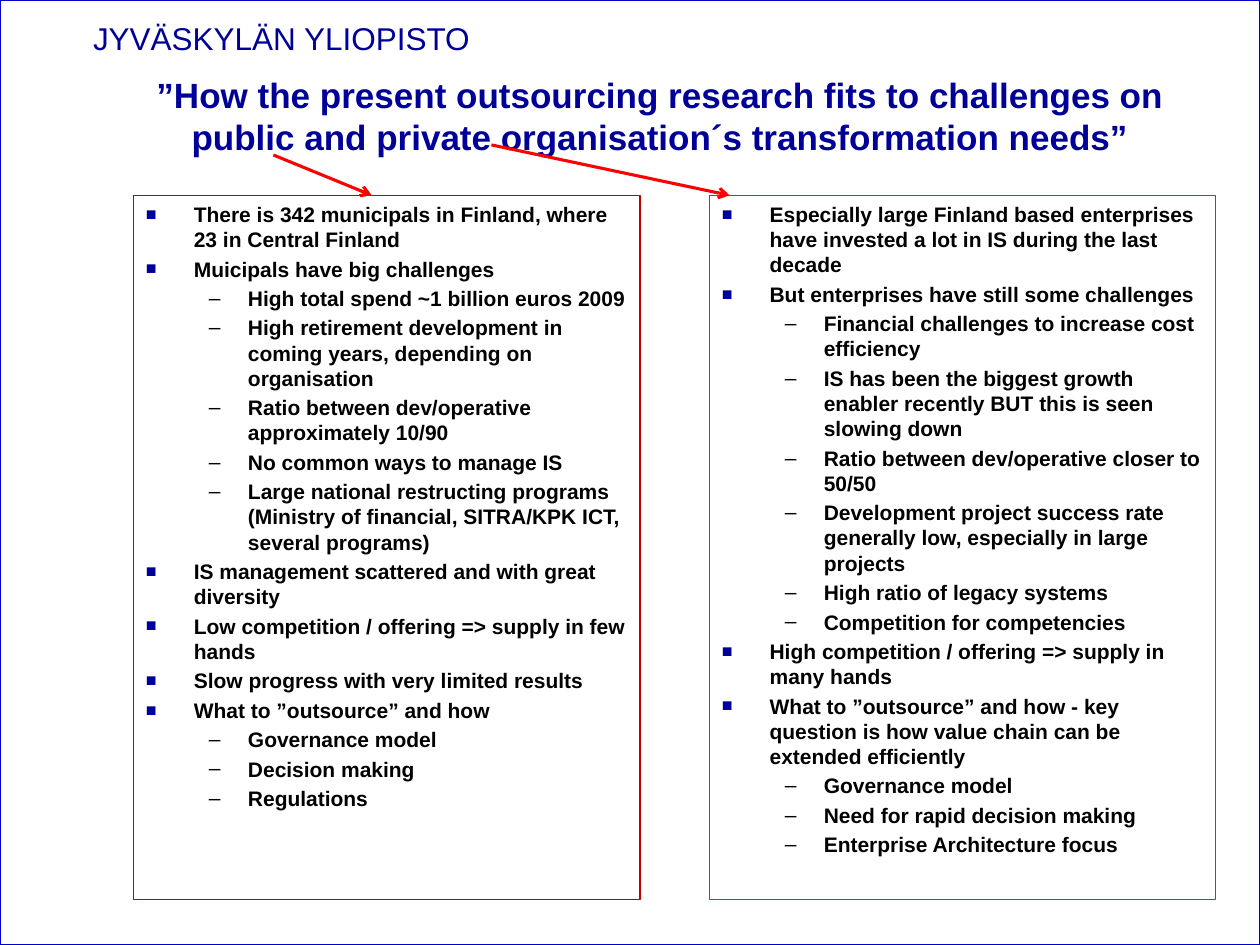
from pptx import Presentation
from pptx.dml.color import RGBColor
from pptx.enum.shapes import MSO_CONNECTOR, MSO_SHAPE
from pptx.enum.text import MSO_ANCHOR, PP_ALIGN
from pptx.oxml.ns import qn
from pptx.util import Inches, Pt
from lxml.etree import SubElement

RECTANGLE = MSO_SHAPE.RECTANGLE
STRAIGHT = MSO_CONNECTOR.STRAIGHT
TOP, MIDDLE = MSO_ANCHOR.TOP, MSO_ANCHOR.MIDDLE
LEFT, CENTER = PP_ALIGN.LEFT, PP_ALIGN.CENTER

NAVY = RGBColor(0x00, 0x00, 0x99)
FRAME_BLUE = RGBColor(0x00, 0x00, 0xCC)
DARK_RED = RGBColor(0xC0, 0x00, 0x00)
BLUE = RGBColor(0x00, 0x70, 0xC0)
RED = RGBColor(0xFF, 0x00, 0x00)
BLACK = RGBColor(0x00, 0x00, 0x00)

FONT = "Arial"
WIDTH, HEIGHT = 10, 7.5
COLUMN_LEFT, COLUMN_STEP = 1.06, 4.57
COLUMN_TOP, COLUMN_WIDTH, COLUMN_HEIGHT = 1.55, 4.02, 5.59
INDENTS = [(0.38, -0.38), (0.81, -0.31)]

TITLE = ("”How the present outsourcing research fits to challenges on "
         "public and private organisation´s transformation needs”")

PUBLIC = [
    (0, "There is 342 municipals in Finland, where 23 in Central Finland"),
    (0, "Muicipals have big challenges"),
    (1, "High total spend ~1 billion euros 2009"),
    (1, "High retirement development in coming years, depending on organisation"),
    (1, "Ratio between dev/operative approximately 10/90"),
    (1, "No common ways to manage IS"),
    (1, "Large national restructing programs (Ministry of financial, "
        "SITRA/KPK ICT, several programs)"),
    (0, "IS management scattered and with great diversity"),
    (0, "Low competition / offering => supply in few hands"),
    (0, "Slow progress with very limited results"),
    (0, "What to ”outsource” and how"),
    (1, "Governance model"),
    (1, "Decision making"),
    (1, "Regulations"),
]

PRIVATE = [
    (0, "Especially large Finland based enterprises have invested a lot in IS "
        "during the last decade"),
    (0, "But enterprises have still some challenges"),
    (1, "Financial challenges to increase cost efficiency"),
    (1, "IS has been the biggest growth enabler recently BUT this is seen slowing down"),
    (1, "Ratio between dev/operative closer to 50/50"),
    (1, "Development project success rate generally low, especially in large projects"),
    (1, "High ratio of legacy systems"),
    (1, "Competition for competencies"),
    (0, "High competition / offering => supply in many hands"),
    (0, "What to ”outsource” and how - key question is how value chain can be "
        "extended efficiently"),
    (1, "Governance model"),
    (1, "Need for rapid decision making"),
    (1, "Enterprise Architecture focus"),
]


def inches(*lengths):
    return [Inches(length) for length in lengths]


def format_font(para, size, color, bold=False):
    for span in para.runs:
        span.font.name = FONT
        span.font.size = Pt(size)
        span.font.bold = bold
        span.font.color.rgb = color


def add_frame(page, area, color, width):
    frame = page.shapes.add_shape(RECTANGLE, *inches(*area))
    frame.shadow.inherit = False
    frame.fill.background()
    frame.line.color.rgb = color
    frame.line.width = Pt(width)
    return frame


def add_header(page, text):
    box = page.shapes.add_textbox(*inches(0.64, 0.1, 3.34, 0.4))
    box.text_frame.word_wrap = True
    box.text_frame.text = text
    format_font(box.text_frame.paragraphs[0], 18, NAVY)


def set_title(page, text):
    title = page.shapes.title
    title.left, title.top, title.width, title.height = inches(0.91, 0.29, 8.66, 1.25)
    title.text_frame.text = text
    title.text_frame.vertical_anchor = MIDDLE
    para = title.text_frame.paragraphs[0]
    para.alignment = CENTER
    format_font(para, 20, NAVY, bold=True)


def set_bullet(para, level):
    margin, indent = inches(*INDENTS[level])
    props = para._p.get_or_add_pPr()
    props.set("marL", str(margin))
    props.set("indent", str(indent))
    if level == 0:
        color = SubElement(props, qn("a:buClr"))
        SubElement(color, qn("a:srgbClr"), val=str(NAVY))
        SubElement(props, qn("a:buSzPct"), val="85000")
    SubElement(props, qn("a:buFont"), typeface=FONT)
    SubElement(props, qn("a:buChar"), char="–" if level else "■")


def add_column(page, index, color, items):
    left = COLUMN_LEFT + index * COLUMN_STEP
    box = add_frame(page, (left, COLUMN_TOP, COLUMN_WIDTH, COLUMN_HEIGHT), color, 0.75)
    frame = box.text_frame
    frame.word_wrap = True
    frame.vertical_anchor = TOP
    frame.text = "\n".join(text for _, text in items)
    for number, (para, (level, _)) in enumerate(zip(frame.paragraphs, items)):
        para.level = level
        para.alignment = LEFT
        para.space_before = Pt(2.4 if number else 0)
        set_bullet(para, level)
        format_font(para, 12, BLACK, bold=True)


def add_arrow(page, start, end):
    arrow = page.shapes.add_connector(STRAIGHT, *inches(*start, *end))
    arrow.line.color.rgb = RED
    arrow.line.width = Pt(1.75)
    SubElement(arrow.line._get_or_add_ln(), qn("a:tailEnd"), type="arrow")
    SubElement(arrow._element.spPr, qn("a:effectLst"))


def main():
    deck = Presentation()
    deck.slide_width, deck.slide_height = inches(WIDTH, HEIGHT)
    page = deck.slides.add_slide(deck.slide_layouts[5])
    add_header(page, "JYVÄSKYLÄN YLIOPISTO")
    add_frame(page, (0, 0, WIDTH, HEIGHT), FRAME_BLUE, 1)
    set_title(page, TITLE)
    add_column(page, 0, DARK_RED, PUBLIC)
    add_column(page, 1, BLUE, PRIVATE)
    add_arrow(page, (2.17, 1.23), (2.95, COLUMN_TOP))
    add_arrow(page, (3.9, 1.15), (5.79, COLUMN_TOP))
    deck.save("out.pptx")


if __name__ == "__main__":
    main()
